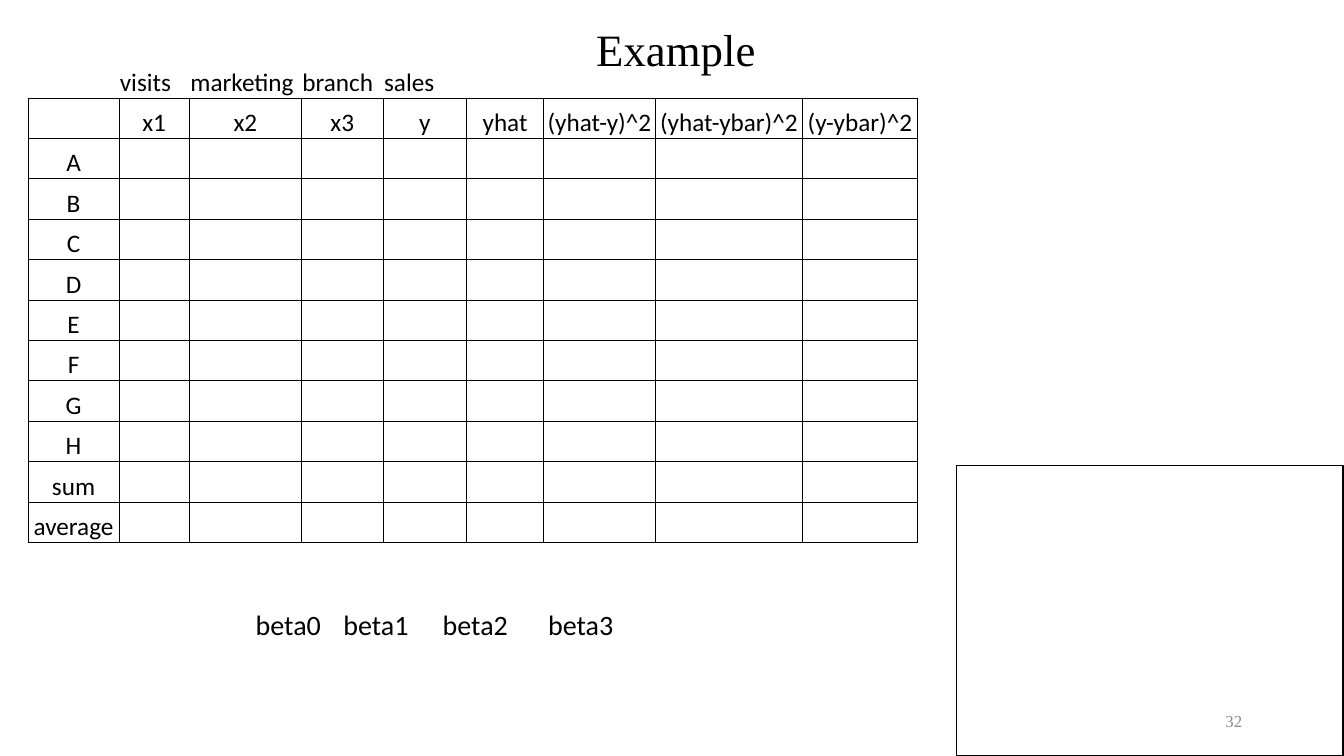
from lxml import etree
from pptx import Presentation
from pptx.dml.color import RGBColor
from pptx.enum.shapes import MSO_SHAPE
from pptx.enum.text import MSO_ANCHOR, PP_ALIGN
from pptx.oxml.ns import qn
from pptx.util import Inches, Pt

LEFT, CENTER, RIGHT = PP_ALIGN.LEFT, PP_ALIGN.CENTER, PP_ALIGN.RIGHT
MIDDLE, BOTTOM = MSO_ANCHOR.MIDDLE, MSO_ANCHOR.BOTTOM
RECTANGLE = MSO_SHAPE.RECTANGLE

BLACK = RGBColor(0x00, 0x00, 0x00)
GRAY = RGBColor(0x8C, 0x8C, 0x8C)
SERIF, SANS = "Times New Roman", "Calibri"

SLIDE_WIDTH, SLIDE_HEIGHT = Inches(13.333), Inches(7.5)
SIDES = ("L", "R", "T", "B")

# Column widths in percent of the slide's width
DATA_COLUMNS = [6.75, 5.25, 8.33, 6.08, 6.23, 5.7, 8.33, 10.95, 8.55]
BETA_COLUMNS = [7.35, 5.7, 9.08, 6.6]

CAPTIONS = ["", "visits", "marketing", "branch", "sales", "", "", "", ""]
HEADINGS = ["", "x1", "x2", "x3", "y", "yhat",
            "(yhat-y)^2", "(yhat-ybar)^2", "(y-ybar)^2"]
ROW_LABELS = [*"ABCDEFGH", "sum", "average"]
BETAS = ["beta0", "beta1", "beta2", "beta3"]


def across(percent):
    return round(SLIDE_WIDTH * percent / 100)


def down(percent):
    return round(SLIDE_HEIGHT * percent / 100)


def box(left, top, width, height):
    return across(left), down(top), across(width), down(height)


def format_text(paragraph, font_name, size, color, alignment):
    paragraph.alignment = alignment
    for run in paragraph.runs:
        run.font.name = font_name
        run.font.size = Pt(size)
        run.font.color.rgb = color


def add_text(slide, area, text, size, color, alignment):
    text_frame = slide.shapes.add_textbox(*area).text_frame
    text_frame.word_wrap = True
    text_frame.vertical_anchor = MIDDLE
    text_frame.text = text
    format_text(text_frame.paragraphs[0], SERIF, size, color, alignment)


def add_frame(slide, area):
    frame = slide.shapes.add_shape(RECTANGLE, *area)
    frame.shadow.inherit = False
    frame.fill.background()
    frame.line.color.rgb = BLACK
    frame.line.width = Pt(1)


def set_borders(cell, ruled_sides):
    properties = cell._tc.get_or_add_tcPr()
    for position, side in enumerate(SIDES):
        line = etree.Element(qn(f"a:ln{side}"), w=str(Pt(0.5)))
        if side in ruled_sides:
            fill = etree.SubElement(line, qn("a:solidFill"))
            etree.SubElement(fill, qn("a:srgbClr"), val=str(BLACK))
        else:
            etree.SubElement(line, qn("a:noFill"))
        properties.insert(position, line)


def format_cell(cell, text, size, alignment, ruled_sides):
    cell.fill.background()
    cell.vertical_anchor = BOTTOM
    cell.margin_left = cell.margin_right = cell.margin_top = Inches(0.01)
    cell.margin_bottom = 0
    cell.text = text
    format_text(cell.text_frame.paragraphs[0], SANS, size, BLACK, alignment)
    set_borders(cell, ruled_sides)


def add_grid(slide, left, top, height, columns, rows):
    area = box(left, top, sum(columns), height)
    table = slide.shapes.add_table(len(rows), len(columns), *area).table
    table.first_row = table.horz_banding = False
    for column, width in zip(table.columns, columns):
        column.width = across(width)
    for row in table.rows:
        row.height = down(height / len(rows))
    return table


def add_data_table(slide):
    blanks = [""] * (len(HEADINGS) - 1)
    rows = [CAPTIONS, HEADINGS] + [[label, *blanks] for label in ROW_LABELS]
    table = add_grid(slide, 2.1, 7.6, 64.13, DATA_COLUMNS, rows)
    for row_index, row in enumerate(rows):
        # The captions stand above the ruled grid
        alignment, ruled_sides = (CENTER, SIDES) if row_index else (LEFT, "B")
        for column_index, text in enumerate(row):
            format_cell(table.cell(row_index, column_index), text, 18,
                        alignment, ruled_sides)


def add_beta_table(slide):
    rows = [BETAS, [""] * len(BETAS)]
    table = add_grid(slide, 17.78, 74.93, 20.4, BETA_COLUMNS, rows)
    for row_index, row in enumerate(rows):
        for column_index, text in enumerate(row):
            format_cell(table.cell(row_index, column_index), text, 20,
                        CENTER, "")


def main():
    presentation = Presentation()
    presentation.slide_width = SLIDE_WIDTH
    presentation.slide_height = SLIDE_HEIGHT
    slide = presentation.slides.add_slide(presentation.slide_layouts[6])

    # Slide number and title
    add_text(slide, box(70.67, 92.67, 22.5, 5.33), "32", 12, GRAY, RIGHT)
    add_text(slide, box(13.95, 1.73, 72.69, 9.47), "Example", 32, BLACK, CENTER)

    # Empty working area
    add_frame(slide, box(71.19, 61.6, 28.73, 38.4))

    # Regression data and coefficients
    add_data_table(slide)
    add_beta_table(slide)

    presentation.save("out.pptx")


if __name__ == "__main__":
    main()
